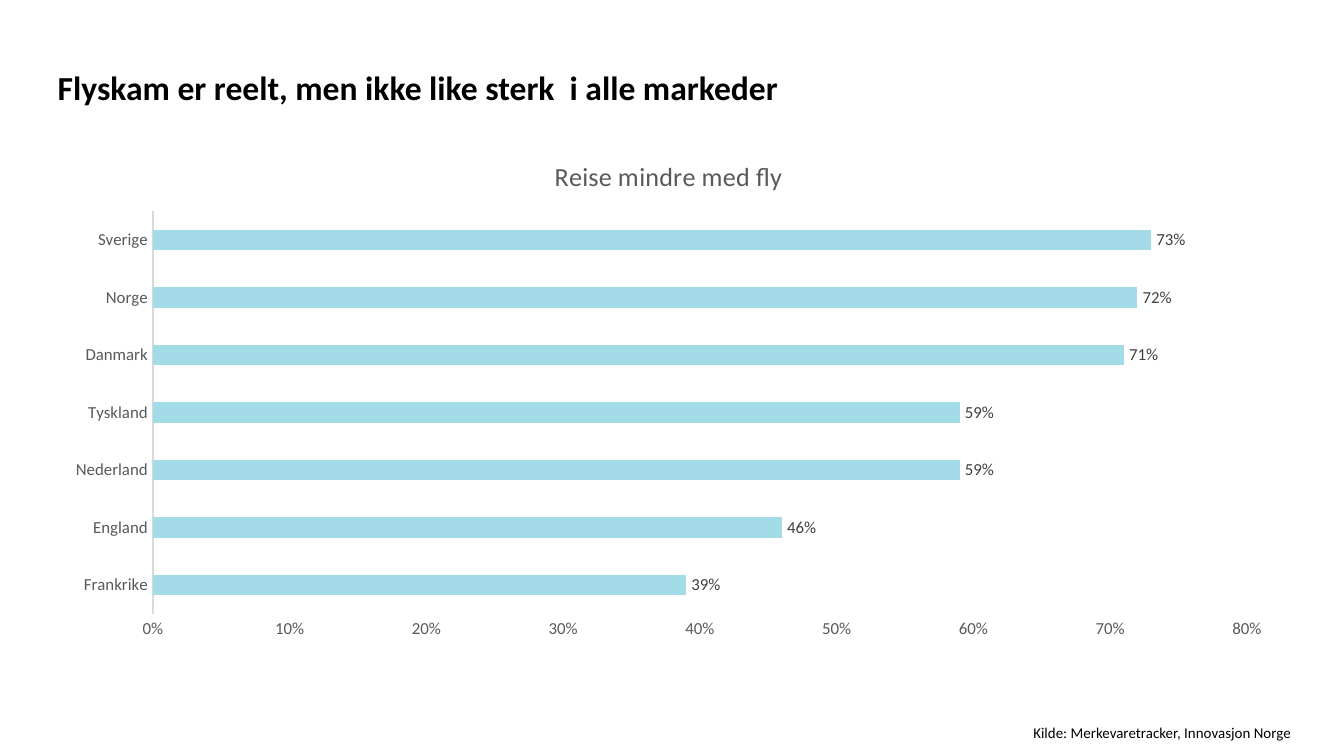
from dataclasses import dataclass

from lxml import etree
from pptx import Presentation
from pptx.chart.data import CategoryChartData
from pptx.dml.color import RGBColor
from pptx.enum import chart as ch, text
from pptx.oxml import ns
from pptx.util import Pt


@dataclass(frozen=True)
class Theme:
    font: str = "Calibri"
    black: RGBColor = RGBColor(0x00, 0x00, 0x00)
    white: RGBColor = RGBColor(0xFF, 0xFF, 0xFF)
    axis_text: RGBColor = RGBColor(0x59, 0x59, 0x59)
    label_text: RGBColor = RGBColor(0x40, 0x40, 0x40)
    axis_line: RGBColor = RGBColor(0xD9, 0xD9, 0xD9)
    bar: RGBColor = RGBColor(0xA4, 0xDB, 0xE8)
    title_size: int = 18
    chart_title_size: int = 14
    chart_size: int = 10
    label_size: int = 9
    source_size: int = 8


THEME = Theme()
CHART_TITLE = "Reise mindre med fly"
SHARES = {
    "Frankrike": 0.39,
    "England": 0.46,
    "Nederland": 0.59,
    "Tyskland": 0.59,
    "Danmark": 0.71,
    "Norge": 0.72,
    "Sverige": 0.73,
}


def style_font(font, size, color, bold=False):
    font.name = THEME.font
    font.size = Pt(size)
    font.color.rgb = color
    font.bold = bold


def add_run(p, words, size, color, bold=False):
    r = p.add_run()
    r.text = words
    style_font(r.font, size, color, bold)


def set_title(s, words):
    sp = s.shapes.title
    sp.left, sp.top, sp.width, sp.height = Pt(30.9), Pt(36), Pt(658), Pt(22)
    sp.fill.solid()
    sp.fill.fore_color.rgb = THEME.white
    tf = sp.text_frame
    tf.margin_left = tf.margin_right = tf.margin_top = tf.margin_bottom = 0
    tf.vertical_anchor = text.MSO_ANCHOR.TOP
    tf.auto_size = text.MSO_AUTO_SIZE.SHAPE_TO_FIT_TEXT
    p = tf.paragraphs[0]
    p.alignment = text.PP_ALIGN.LEFT
    add_run(p, words, THEME.title_size, THEME.black, bold=True)


def fill_chart_area(chart, color):
    """Fill the chart background and remove its border."""
    sp_pr = etree.Element(ns.qn("c:spPr"))
    fill = etree.SubElement(sp_pr, ns.qn("a:solidFill"))
    etree.SubElement(fill, ns.qn("a:srgbClr"), val=str(color))
    line = etree.SubElement(sp_pr, ns.qn("a:ln"))
    etree.SubElement(line, ns.qn("a:noFill"))
    chart.element.find(ns.qn("c:chart")).addnext(sp_pr)


def style_axis(axis):
    axis.major_tick_mark = axis.minor_tick_mark = ch.XL_TICK_MARK.NONE
    axis.has_major_gridlines = False
    style_font(axis.tick_labels.font, THEME.label_size, THEME.axis_text)


def add_bar_chart(s, title, shares):
    data = CategoryChartData(number_format="0%")
    data.categories = list(shares)
    data.add_series(title, list(shares.values()))
    chart = s.shapes.add_chart(
        ch.XL_CHART_TYPE.BAR_CLUSTERED, Pt(27.4), Pt(72.7), Pt(661.6), Pt(275), data
    ).chart
    style_font(chart.font, THEME.chart_size, THEME.black)
    fill_chart_area(chart, THEME.white)
    chart.has_legend = False

    # Chart title
    chart.has_title = True
    chart.chart_title.include_in_layout = False
    p = chart.chart_title.text_frame.paragraphs[0]
    add_run(p, title, THEME.chart_title_size, THEME.axis_text)

    # Axes
    countries, percent = chart.category_axis, chart.value_axis
    style_axis(countries)
    countries.format.line.color.rgb = THEME.axis_line
    countries.format.line.width = Pt(0.75)
    style_axis(percent)
    percent.format.line.fill.background()
    percent.minimum_scale, percent.maximum_scale = 0, 0.8
    percent.major_unit = 0.1
    percent.tick_labels.number_format = "0%"
    percent.tick_labels.number_format_is_linked = False

    # Bars and their labels
    plot = chart.plots[0]
    plot.gap_width = 182
    plot.vary_by_categories = False
    series = plot.series[0]
    series.format.fill.solid()
    series.format.fill.fore_color.rgb = THEME.bar
    labels = series.data_labels
    labels.show_value = True
    labels.number_format = "0%"
    labels.number_format_is_linked = False
    labels.position = ch.XL_LABEL_POSITION.OUTSIDE_END
    style_font(labels.font, THEME.label_size, THEME.label_text)


def add_source(s, words):
    tf = s.shapes.add_textbox(Pt(546.5), Pt(384.1), Pt(155.5), Pt(17)).text_frame
    tf.word_wrap = False
    tf.auto_size = text.MSO_AUTO_SIZE.SHAPE_TO_FIT_TEXT
    add_run(tf.paragraphs[0], words, THEME.source_size, THEME.black)


def main():
    prs = Presentation()
    prs.slide_width, prs.slide_height = Pt(720), Pt(405)
    s = prs.slides.add_slide(prs.slide_layouts.get_by_name("Title Only"))
    s.background.fill.solid()
    s.background.fill.fore_color.rgb = THEME.white

    set_title(s, "Flyskam er reelt, men ikke like sterk  i alle markeder")
    add_bar_chart(s, CHART_TITLE, SHARES)
    add_source(s, "Kilde: Merkevaretracker, Innovasjon Norge")

    prs.save("out.pptx")


if __name__ == "__main__":
    main()
